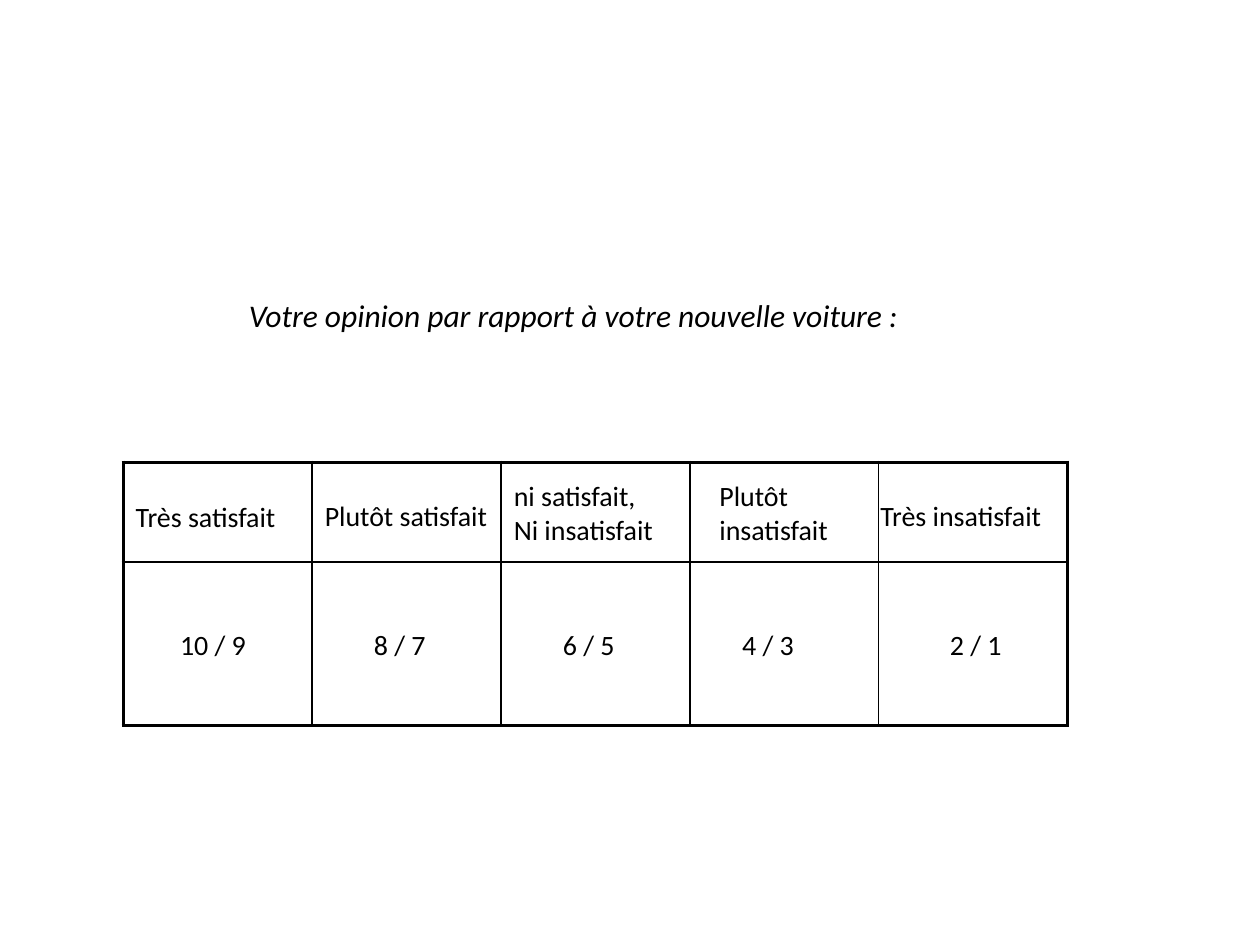
from lxml.etree import SubElement
from pptx import Presentation
from pptx.dml.color import RGBColor
from pptx.enum.text import MSO_AUTO_SIZE
from pptx.oxml.ns import qn
from pptx.util import Pt

BLACK = "000000"
TABLE_LEFT, TABLE_TOP = 70.5, 264.25
COLUMN_WIDTH = 107.9
ROW_HEIGHTS = (57, 93.5)
THIN, THICK = 1, 2.25

# Text, left, top, width and height of each entry laid over the grid
LABELS = (
    ("Très satisfait", 70.5, 282.2, 105, 26.6),
    ("Plutôt satisfait", 178.5, 281.3, 114.5, 26.6),
    ("ni satisfait,\nNi insatisfait", 286.5, 270, 101, 46),
    ("Plutôt\ninsatisfait", 404, 270, 81.5, 46),
    ("Très insatisfait", 496, 281.3, 117.5, 26.6),
)
SCORE_TOP, SCORE_HEIGHT = 355, 26.6
SCORES = (
    ("10 / 9", 95.8, 54.7),
    ("8 / 7", 206.6, 46),
    ("6 / 5", 314.6, 46),
    ("4 / 3", 417, 46),
    ("2 / 1", 535.7, 46),
)


def color(hex_value):
    return RGBColor.from_string(hex_value)


def write(text_frame, text, size=16, italic=False, font="Calibri", fill=BLACK):
    """Fill the frame, one paragraph per line of text."""
    text_frame.text = text
    for paragraph in text_frame.paragraphs:
        paragraph.space_before = Pt(0)
        for run in paragraph.runs:
            run.font.name = font
            run.font.size = Pt(size)
            run.font.italic = italic
            run.font.color.rgb = color(fill)


def set_border(cell, side, width):
    """Draw one side of a cell; side is L, R, T or B."""
    line = SubElement(cell._tc.get_or_add_tcPr(), qn(f"a:ln{side}"), w=str(Pt(width)))
    fill = SubElement(line, qn("a:solidFill"))
    SubElement(fill, qn("a:srgbClr"), val=BLACK)


class SurveySlide:
    def __init__(self, presentation):
        self.slide = presentation.slides.add_slide(presentation.slide_layouts[1])
        title = self.slide.shapes.title
        title.element.getparent().remove(title.element)

    def question(self, text, left, top, width, height, indent):
        body = self.slide.placeholders[1]
        body.left, body.top = Pt(left), Pt(top)
        body.width, body.height = Pt(width), Pt(height)
        body.text_frame.margin_top = Pt(13)
        write(body.text_frame, text, size=18, italic=True)
        properties = body.text_frame.paragraphs[0]._p.get_or_add_pPr()
        properties.set("marL", str(Pt(indent)))
        properties.set("indent", "0")
        SubElement(properties, qn("a:buNone"))

    def grid(self, left, top, column_count, column_width, row_heights):
        """Add an empty table with a thick frame and thin inner lines."""
        row_count = len(row_heights)
        table = self.slide.shapes.add_table(
            row_count, column_count, Pt(left), Pt(top),
            Pt(column_count * column_width), Pt(sum(row_heights))).table
        for column in table.columns:
            column.width = Pt(column_width)
        for row_index, row in enumerate(table.rows):
            row.height = Pt(row_heights[row_index])
            for column_index, cell in enumerate(row.cells):
                outer_sides = {
                    "L": column_index == 0,
                    "R": column_index == column_count - 1,
                    "T": row_index == 0,
                    "B": row_index == row_count - 1,
                }
                for side, is_outer in outer_sides.items():
                    set_border(cell, side, THICK if is_outer else THIN)
                cell.fill.background()

    def entry(self, text, left, top, width, height):
        box = self.slide.shapes.add_textbox(Pt(left), Pt(top), Pt(width), Pt(height))
        box.text_frame.word_wrap = False
        box.text_frame.auto_size = MSO_AUTO_SIZE.SHAPE_TO_FIT_TEXT
        write(box.text_frame, text)


def main():
    presentation = Presentation()
    presentation.slide_width, presentation.slide_height = Pt(720), Pt(540)
    survey = SurveySlide(presentation)
    survey.question("Votre opinion par rapport à votre nouvelle voiture :",
                    36, 156.2, 647.3, 306, indent=99)
    survey.grid(TABLE_LEFT, TABLE_TOP, len(LABELS), COLUMN_WIDTH, ROW_HEIGHTS)
    for label in LABELS:
        survey.entry(*label)
    for text, left, width in SCORES:
        survey.entry(text, left, SCORE_TOP, width, SCORE_HEIGHT)
    presentation.save("out.pptx")


if __name__ == "__main__":
    main()
